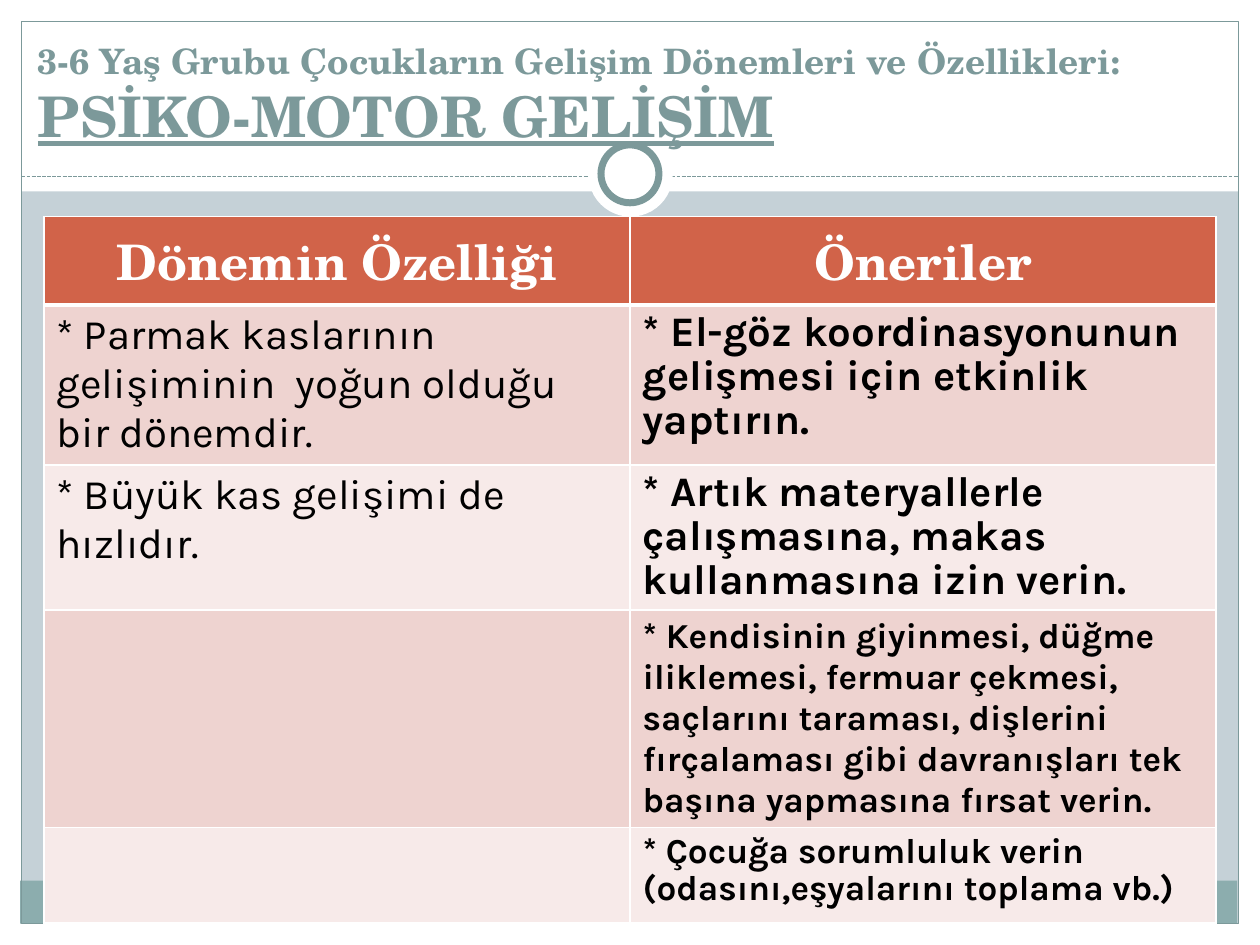
"""Build a Turkish slide on psychomotor development at ages 3-6."""
import pptx
import pptx.util
import pptx.dml.color
import pptx.enum.dml
import pptx.enum.shapes
import pptx.enum.text
import pptx.oxml
import pptx.oxml.ns
from dataclasses import dataclass

Inches, Pt = pptx.util.Inches, pptx.util.Pt
Color = pptx.dml.color.RGBColor.from_string
Shape = pptx.enum.shapes.MSO_SHAPE
Align = pptx.enum.text.PP_ALIGN


@dataclass(frozen=True)
class Theme:
    white: str = "FFFFFF"
    black: str = "000000"
    backdrop: str = "C5D1D7"
    accent: str = "7C999A"
    footer: str = "8CADAE"
    header: str = "D16349"
    bands: tuple = ("EED3D0", "F7EAE9")
    serif: str = "TeX Gyre Schola"
    sans: str = "Karla"
    headline: int = 32
    heading: int = 28
    body: int = 24
    small: int = 20


theme = Theme()


def write_span(para, text, **formats):
    span = para.add_run()
    span.text = text
    span.font.color.rgb = Color(formats.pop("color"))
    for name, value in formats.items():
        setattr(span.font, name, value)


def draw_borders(cell, widths):
    properties = cell._tc.get_or_add_tcPr()
    for side, width in widths.items():
        properties.append(pptx.oxml.parse_xml(
            f'<a:ln{side} {pptx.oxml.ns.nsdecls("a")} w="{Pt(width)}"><a:solidFill>'
            f'<a:srgbClr val="{theme.white}"/></a:solidFill></a:ln{side}>'))


deck = pptx.Presentation()
deck.slide_width, deck.slide_height = Inches(10), Inches(7.5)
slide = deck.slides.add_slide(deck.slide_layouts[5])
slide.background.fill.solid()
slide.background.fill.fore_color.rgb = Color(theme.backdrop)

rule = slide.shapes.add_connector(
    pptx.enum.shapes.MSO_CONNECTOR.STRAIGHT, Inches(0.17), Inches(1.4), Inches(9.83), Inches(1.4))
rule.line.color.rgb = Color(theme.accent)
rule.line.width = Pt(0.75)
rule.line.dash_style = pptx.enum.dml.MSO_LINE.SQUARE_DOT
rule._element.spPr.append(pptx.oxml.parse_xml(f'<a:effectLst {pptx.oxml.ns.nsdecls("a")}/>'))

decorations = [
    (Shape.RECTANGLE, (0, 7.33, 10, 0.17), theme.white, None),
    (Shape.RECTANGLE, (0, 0, 10, 1.52), theme.white, None),
    (Shape.RECTANGLE, (0, 0, 0.17, 7.5), theme.white, None),
    (Shape.RECTANGLE, (9.83, 0, 0.17, 7.5), theme.white, None),
    (Shape.RECTANGLE, (0.16, 6.99, 9.66, 0.34), theme.footer, None),
    (Shape.RECTANGLE, (0.17, 0.17, 9.66, 7.16), None, 0.75),
    (Shape.OVAL, (4.67, 1.05, 0.67, 0.67), theme.white, None),
    (Shape.OVAL, (4.77, 1.15, 0.46, 0.46), theme.white, 4),
]
for kind, place, fill, line in decorations:
    if kind == Shape.OVAL and line is None:
        rule.element.getparent().append(rule.element)
    shape = slide.shapes.add_shape(kind, *map(Inches, place))
    shape.shadow.inherit = False
    if fill:
        shape.fill.solid()
        shape.fill.fore_color.rgb = Color(fill)
    else:
        shape.fill.background()
    if line:
        shape.line.color.rgb = Color(theme.accent)
        shape.line.width = Pt(line)
    else:
        shape.line.fill.background()

title = slide.shapes.title
title.element.getparent().append(title.element)
title_place = {"left": 0.2, "top": 0.05, "width": 9.8, "height": 1.18}
for name, value in title_place.items():
    setattr(title, name, Inches(value))
frame = title.text_frame
frame_formats = {"word_wrap": True, "auto_size": pptx.enum.text.MSO_AUTO_SIZE.NONE,
                 "vertical_anchor": pptx.enum.text.MSO_ANCHOR.BOTTOM}
for name, value in frame_formats.items():
    setattr(frame, name, value)
para = frame.paragraphs[0]
para.alignment = Align.LEFT
title_style = {"name": theme.serif, "color": theme.accent, "bold": True}
write_span(para, "3-6 Yaş Grubu Çocukların Gelişim Dönemleri ve Özellikleri:",
           size=Pt(theme.small), **title_style)
para.add_line_break()
write_span(para, "PSİKO-MOTOR GELİŞİM", size=Pt(theme.headline), underline=True, **title_style)

row_heights = [0.69, 1.27, 1.15, 1.72, 0.76]
rows = [
    (["Dönemin Özelliği"], ["Öneriler"], theme.heading, None),
    (["* Parmak kaslarının gelişiminin  yoğun olduğu bir dönemdir."],
     ["* El-göz koordinasyonunun", "gelişmesi için etkinlik yaptırın."], theme.body, 0.9),
    (["* Büyük kas gelişimi de hızlıdır."],
     ["* Artık materyallerle çalışmasına, makas kullanmasına izin verin."], theme.body, 0.9),
    ([], ["* Kendisinin giyinmesi, düğme iliklemesi, fermuar çekmesi, saçlarını taraması, "
          "dişlerini fırçalaması gibi davranışları tek başına yapmasına fırsat verin."],
     theme.small, None),
    ([], ["* Çocuğa sorumluluk verin", "(odasını,eşyalarını toplama vb.)"], theme.small, 0.9),
]
table = slide.shapes.add_table(len(rows), 2, Inches(0.35), Inches(1.72), Inches(9.3),
                               Inches(sum(row_heights))).table
for row, height in zip(table.rows, row_heights):
    row.height = Inches(height)

for row_index, (*columns, size, spacing) in enumerate(rows):
    is_header = row_index == 0
    for column_index, lines in enumerate(columns):
        cell = table.cell(row_index, column_index)
        draw_borders(cell, {"L": 1, "R": 1, "T": 3 if row_index == 1 else 1,
                            "B": 3 if is_header else 1})
        cell.fill.solid()
        cell.fill.fore_color.rgb = Color(
            theme.header if is_header else theme.bands[(row_index - 1) % 2])
        for line_index, text in enumerate(lines):
            para = cell.text_frame.paragraphs[0] if line_index == 0 else cell.text_frame.add_paragraph()
            para.alignment = Align.CENTER if is_header else Align.LEFT
            if column_index == 1 and spacing:
                para.line_spacing = spacing
            write_span(para, text, size=Pt(size), bold=is_header or column_index == 1,
                       name=theme.serif if is_header else theme.sans,
                       color=theme.white if is_header else theme.black)

deck.save("out.pptx")
